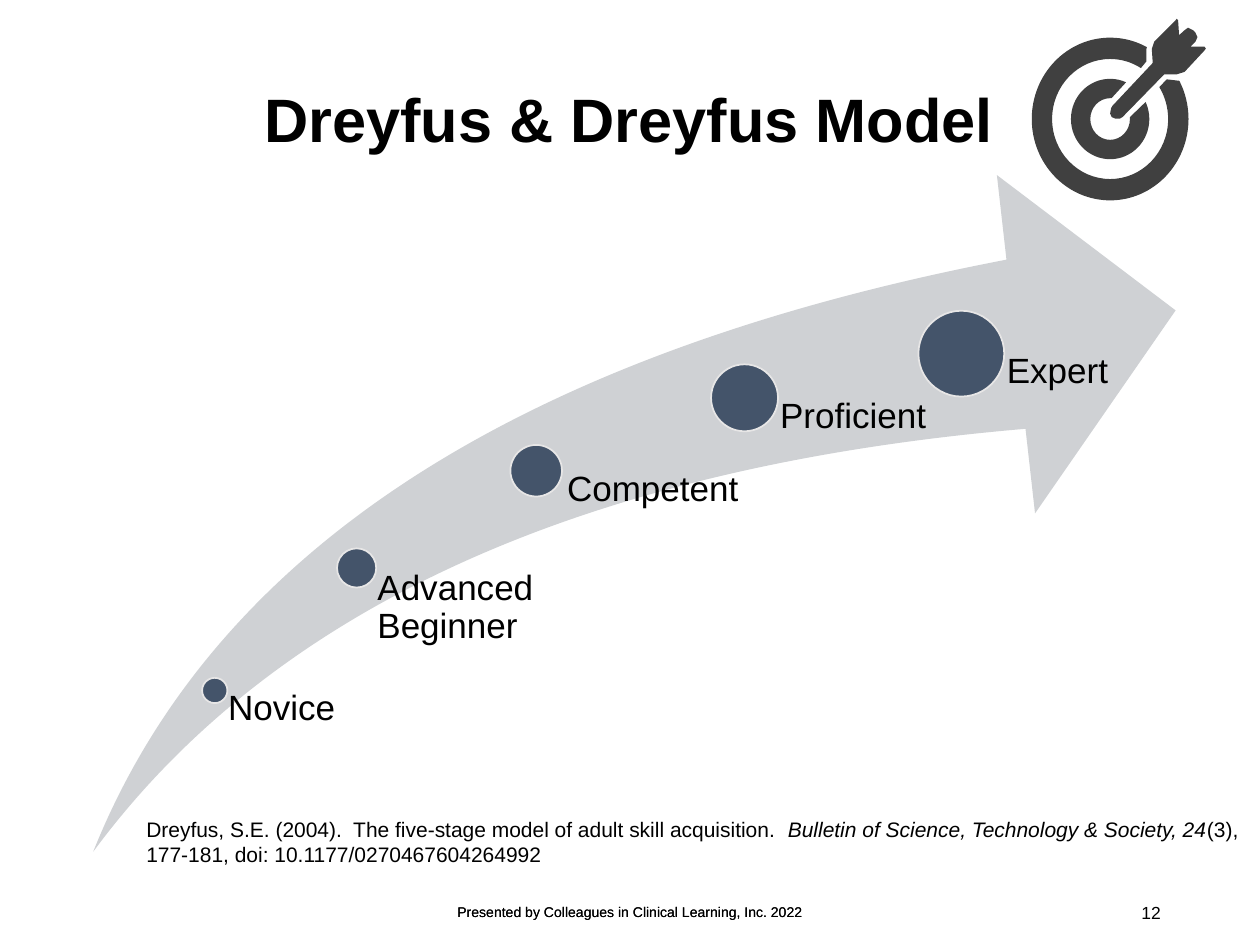
from math import cos, radians, sin, tan

from lxml import etree
from pptx import Presentation
from pptx.dml.color import RGBColor
from pptx.enum.shapes import MSO_SHAPE as Shape
from pptx.enum.text import MSO_ANCHOR as Anchor, PP_ALIGN as Align
from pptx.oxml.ns import qn
from pptx.util import Cm, Pt

BLACK = RGBColor(0x00, 0x00, 0x00)
SWOOSH_GREY = RGBColor(0xCF, 0xD1, 0xD4)
SLATE = RGBColor(0x44, 0x54, 0x6A)
PALE_GREY = RGBColor(0xE7, 0xE6, 0xE6)
ICON_GREY = RGBColor(0x40, 0x40, 0x40)

SWOOSH_BOTTOM = 17.17
LABEL_INSET = 0.53  # share of the dot's diameter
TARGET_X, TARGET_Y = 22.38, 2.4

# name, dot centre, dot diameter, label corner, label width
STAGES = [
    ("Novice", (4.33, 13.92), 0.51, (4.33, 13.92), 2.84),
    ("Advanced Beginner", (7.19, 11.45), 0.79, (7.19, 11.5), 3.63),
    ("Competent", (10.81, 9.49), 1.04, (10.88, 9.51), 4.22),
    ("Proficient", (15.01, 8.02), 1.35, (15.01, 8.03), 4.37),
    ("Expert", (19.38, 7.13), 1.73, (19.38, 7.12), 4.37),
]
CITATION = [
    ("Dreyfus, S.E. (2004).  The five-stage model of adult skill acquisition.  ", False),
    ("Bulletin of Science, Technology & Society, 24", True),
    ("(3), 177-181, doi: 10.1177/0270467604264992", False),
]
# A segment of one point is a line, one of three points a Bézier curve.
DART = [[point] for point in [
    (24, 0.94), (24.1, 0.84), (24.14, 0.75), (24.1, 0.66), (24.05, 0.61),
    (23.95, 0.56), (23.88, 0.61), (23.77, 0.71), (23.75, 0.41), (23.72, 0.38),
    (23.7, 0.41), (23.27, 0.84), (23.22, 0.99), (23.24, 1.27), (22.43, 2.13),
    (22.4, 2.18), (22.38, 2.29), (22.41, 2.36), (22.48, 2.39), (22.58, 2.39),
    (22.63, 2.36), (23.47, 1.5), (23.72, 1.5), (23.88, 1.45), (24.28, 1.02),
    (24.31, 0.98), (24.28, 0.94),
]]


def arc(radius_x, radius_y, start, end):
    """Line to the start angle, then curves split at each quarter turn."""
    def place(angle, pull=0):
        return (TARGET_X + radius_x * (cos(angle) - pull * sin(angle)),
                TARGET_Y - radius_y * (sin(angle) + pull * cos(angle)))

    low, high = sorted((start, end))
    quarters = [angle for angle in range(0, 451, 90) if low < angle < high]
    stops = [radians(a) for a in sorted([low, *quarters, high], reverse=start > end)]
    segments = [[place(stops[0])]]
    for a, b in zip(stops, stops[1:]):
        pull = 4 / 3 * tan((b - a) / 4)
        segments.append([place(a, pull), place(b, -pull), place(b)])
    return segments


class SlideBuilder:
    font = "Arial"

    def __init__(self, slide):
        self.shapes = slide.shapes

    def text(self, runs, box, size, anchor=Anchor.TOP, insets=None, bold=False, **paragraph_format):
        """Add a text box; runs is a string or a list of (text, italic)."""
        frame = self.shapes.add_textbox(*map(Cm, box)).text_frame
        frame.word_wrap = True
        frame.vertical_anchor = anchor
        for side, inset in (insets or {}).items():
            setattr(frame, f"margin_{side}", Cm(inset))
        paragraph = frame.paragraphs[0]
        for name, value in paragraph_format.items():
            setattr(paragraph, name, value)
        for words, italic in [(runs, False)] if isinstance(runs, str) else runs:
            run = paragraph.add_run()
            run.text = words
            style = {"name": self.font, "size": Pt(size), "bold": bold, "italic": italic}
            for name, value in style.items():
                setattr(run.font, name, value)
            run.font.color.rgb = BLACK

    def paint(self, shape, fill, outline=None):
        shape.shadow.inherit = False
        shape.fill.solid()
        shape.fill.fore_color.rgb = fill
        if outline is None:
            shape.line.fill.background()
        else:
            shape.line.color.rgb = outline
            shape.line.width = Pt(1)

    def preset(self, kind, box, fill, outline=None, adjustments=()):
        shape = self.shapes.add_shape(kind, *map(Cm, box))
        for index, value in enumerate(adjustments):
            shape.adjustments[index] = value
        self.paint(shape, fill, outline)

    def outline(self, segments, fill):
        """Build a closed freeform, joining each curve's three points."""
        start, *others = [(Cm(x), Cm(y)) for segment in segments for x, y in segment]
        builder = self.shapes.build_freeform(*start)
        builder.add_line_segments(others, close=True)
        shape = builder.convert_to_shape()
        lines = iter(list(shape.element.iter(qn("a:lnTo"))))
        for segment in segments[1:]:
            steps = [next(lines) for _ in segment]
            if len(steps) == 3:
                curve = etree.Element(qn("a:cubicBezTo"))
                steps[0].addprevious(curve)
                for step in steps:
                    curve.append(step[0])
                    step.getparent().remove(step)
        self.paint(shape, fill)

    def stage(self, name, centre, diameter, label_corner, label_width):
        corner = [middle - diameter / 2 for middle in centre]
        self.preset(Shape.OVAL, (*corner, diameter, diameter), SLATE, PALE_GREY)
        insets = {"left": diameter * LABEL_INSET, "top": 0, "right": 0, "bottom": 0}
        self.text(name, (*label_corner, label_width, SWOOSH_BOTTOM - label_corner[1]), 20,
                  insets=insets, line_spacing=0.9)

    def target(self):
        """Draw two rings opened at the upper right, with a dart in the gap."""
        outer_ring = [
            *arc(1.58, 1.64, 62, 388), [(23.52, 1.6)],
            *arc(1.17, 1.21, 392, 58), [(23.11, 1.24)], [(23.11, 0.99)],
        ]
        inner_ring = arc(0.79, 0.81, 66, 385) + arc(0.4, 0.42, 365, 86)
        for segments in (outer_ring, inner_ring, DART):
            self.outline(segments, ICON_GREY)


def main():
    deck = Presentation()
    deck.slide_width, deck.slide_height = Cm(25.4), Cm(19.05)
    page = SlideBuilder(deck.slides.add_slide(deck.slide_layouts[6]))

    page.text("Dreyfus & Dreyfus Model", (5.08, 0.64, 18.14, 3.68), 35,
              Anchor.MIDDLE, bold=True, line_spacing=0.9)
    page.text("12", (17.93, 17.88, 5.72, 1.02), 10, Anchor.MIDDLE, alignment=Align.RIGHT)
    page.preset(Shape.SWOOSH_ARROW, (1.88, 3.53, 21.82, SWOOSH_BOTTOM - 3.53),
                SWOOSH_GREY, adjustments=(0.25, 0.25))
    for stage in STAGES:
        page.stage(*stage)
    page.text(CITATION, (2.7, 16.33, 22.86, 1.27), 12)
    page.target()
    for _ in range(2):  # the footer is set twice, which darkens it
        page.text("Presented by Colleagues in Clinical Learning, Inc. 2022",
                  (8.41, 17.88, 8.59, 1.02), 8, Anchor.MIDDLE, alignment=Align.CENTER)

    deck.save("out.pptx")


if __name__ == "__main__":
    main()
